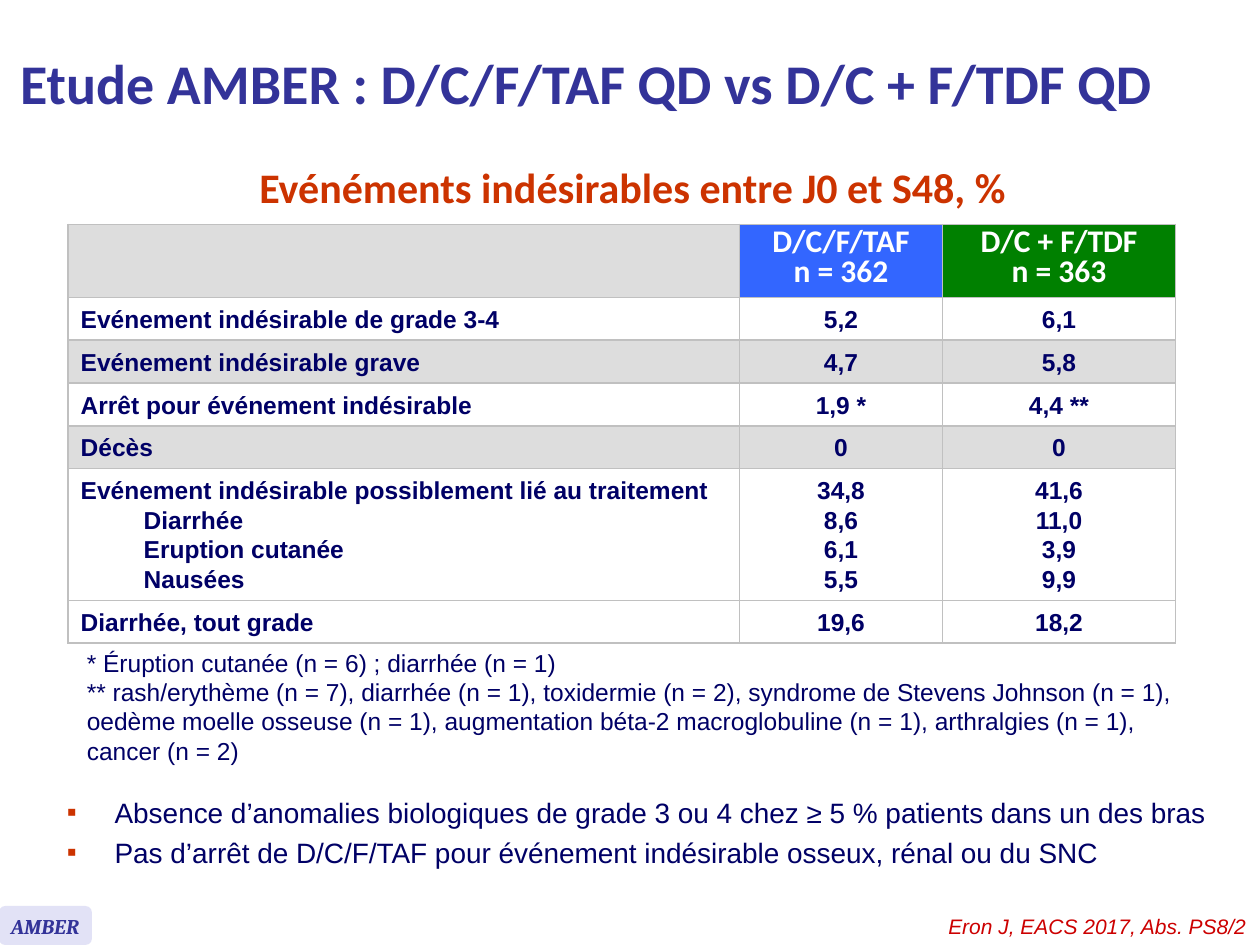
from dataclasses import dataclass

import lxml.etree
import pptx
import pptx.dml.color
import pptx.enum.shapes
import pptx.enum.text
import pptx.oxml.ns
import pptx.util

Inches = pptx.util.Inches
Pt = pptx.util.Pt
PP_ALIGN = pptx.enum.text.PP_ALIGN
MSO_ANCHOR = pptx.enum.text.MSO_ANCHOR
MSO_AUTO_SIZE = pptx.enum.text.MSO_AUTO_SIZE
qn = pptx.oxml.ns.qn

NAVY, INDIGO, RUST, WHITE = "000066", "333399", "CC3300", "FFFFFF"
GREY, BORDER = "DDDDDD", "C0C0C0"


@dataclass
class Style:
    size: float
    face: str
    color: str
    bold: bool = False
    italic: bool = False
    align: PP_ALIGN = PP_ALIGN.LEFT
    line_pt: float = 0


@dataclass
class Row:
    height: float
    fills: tuple[str, str, str]
    label: list[str]
    values: tuple[list[str], list[str]]


def rgb(color: str) -> pptx.dml.color.RGBColor:
    return pptx.dml.color.RGBColor.from_string(color)


def place(shape, left: float, top: float, width: float, height: float) -> None:
    shape.left, shape.top = Inches(left), Inches(top)
    shape.width, shape.height = Inches(width), Inches(height)


def set_indent(paragraph, left: float, first: float = 0) -> None:
    properties = paragraph._p.get_or_add_pPr()
    properties.set("marL", str(Inches(left)))
    properties.set("indent", str(Inches(first)))


def set_bullet(paragraph, char: str = "", color: str = "") -> None:
    properties = paragraph._p.get_or_add_pPr()
    if not char:
        lxml.etree.SubElement(properties, qn("a:buNone"))
        return
    bullet_color = lxml.etree.SubElement(properties, qn("a:buClr"))
    lxml.etree.SubElement(bullet_color, qn("a:srgbClr")).set("val", color)
    lxml.etree.SubElement(properties, qn("a:buFont")).set("typeface", "Arial")
    lxml.etree.SubElement(properties, qn("a:buChar")).set("char", char)


def write(frame, lines: list[str], style: Style) -> list:
    """Fill a text frame with one paragraph per line."""
    for index, line in enumerate(lines):
        paragraph = frame.paragraphs[0] if index == 0 else frame.add_paragraph()
        paragraph.text = line
    for paragraph in frame.paragraphs:
        paragraph.alignment = style.align
        if style.line_pt:
            paragraph.line_spacing = Pt(style.line_pt)
    return list(frame.paragraphs)


def format_font(paragraphs: list, style: Style) -> None:
    for paragraph in paragraphs:
        font = paragraph.font
        font.size, font.name = Pt(style.size), style.face
        font.bold, font.italic = style.bold, style.italic
        font.color.rgb = rgb(style.color)


def add_text(slide, box: tuple, lines: list[str], style: Style, wrap: bool = True) -> None:
    note = slide.shapes.add_textbox(*map(Inches, box))
    note.text_frame.word_wrap = wrap
    note.text_frame.auto_size = MSO_AUTO_SIZE.SHAPE_TO_FIT_TEXT
    format_font(write(note.text_frame, lines, style), style)


def fill_cell(cell, fill: str, lines: list[str], style: Style) -> None:
    properties = cell._tc.get_or_add_tcPr()
    for side in ("a:lnL", "a:lnR", "a:lnT", "a:lnB"):
        line = lxml.etree.SubElement(properties, qn(side), w=str(Pt(1)))
        solid = lxml.etree.SubElement(line, qn("a:solidFill"))
        lxml.etree.SubElement(solid, qn("a:srgbClr")).set("val", BORDER)
    cell.fill.solid()
    cell.fill.fore_color.rgb = rgb(fill)
    cell.vertical_anchor = MSO_ANCHOR.MIDDLE
    paragraphs = write(cell.text_frame, lines, style)
    for paragraph in paragraphs[1:] if style.align == PP_ALIGN.LEFT else []:
        paragraph.level = 1
        set_indent(paragraph, 0.5)
    format_font(paragraphs, style)


def add_events_table(slide, rows: list[Row], widths: list[float]) -> None:
    height = sum(row.height for row in rows)
    table = slide.shapes.add_table(
        len(rows), len(widths), Inches(0.54), Inches(1.78),
        Inches(sum(widths)), Inches(height)).table
    for column, width in zip(table.columns, widths):
        column.width = Inches(width)
    label = Style(14, "Arial", NAVY, bold=True, line_pt=17)
    value = Style(14, "Arial", NAVY, bold=True, align=PP_ALIGN.CENTER, line_pt=17)
    header = Style(18, "Calibri", WHITE, bold=True, align=PP_ALIGN.CENTER, line_pt=17)
    for index, row in enumerate(rows):
        table.rows[index].height = Inches(row.height)
        for column, lines in enumerate([row.label, *row.values]):
            style = header if index == 0 else value if column else label
            fill_cell(table.cell(index, column), row.fills[column], lines, style)


def event(label: str, taf: str, tdf: str, fill: str = WHITE) -> Row:
    return Row(0.34, (fill,) * 3, [label], ([taf], [tdf]))


ROWS = [
    Row(0.58, (GREY, "3366FF", "008000"), [],
        (["D/C/F/TAF", "n = 362"], ["D/C + F/TDF", "n = 363"])),
    event("Evénement indésirable de grade 3-4", "5,2", "6,1"),
    event("Evénement indésirable grave", "4,7", "5,8", GREY),
    event("Arrêt pour événement indésirable", "1,9 *", "4,4 **"),
    event("Décès", "0", "0", GREY),
    Row(1.04, (WHITE,) * 3,
        ["Evénement indésirable possiblement lié au traitement",
         "Diarrhée", "Eruption cutanée", "Nausées"],
        (["34,8", "8,6\v6,1\v5,5"], ["41,6", "11,0\v3,9\v9,9"])),
    event("Diarrhée, tout grade", "19,6", "18,2"),
]
FOOTNOTES = [
    "* Éruption cutanée (n = 6) ; diarrhée (n = 1)",
    "** rash/erythème (n = 7), diarrhée (n = 1), toxidermie (n = 2), syndrome de Stevens Johnson (n = 1),",
    "oedème moelle osseuse (n = 1), augmentation béta-2 macroglobuline (n = 1), arthralgies (n = 1),",
    "cancer (n = 2)",
]
FINDINGS = [
    "Absence d’anomalies biologiques de grade 3 ou 4 chez ≥ 5 % patients dans un des bras",
    "Pas d’arrêt de D/C/F/TAF pour événement indésirable osseux, rénal ou du SNC",
]


def main() -> None:
    deck = pptx.Presentation()
    deck.slide_width, deck.slide_height = Inches(10), Inches(7.5)
    slide = deck.slides.add_slide(deck.slide_layouts[3])
    title, subtitle, findings = slide.placeholders
    for holder in (title, subtitle, findings):
        holder.text_frame.auto_size = MSO_AUTO_SIZE.NONE

    # Title and subtitle
    place(title, 0.06, 0.05, 9.55, 1.21)
    title.text_frame.vertical_anchor = MSO_ANCHOR.MIDDLE
    title_style = Style(32, "Calibri", INDIGO, bold=True)
    format_font(write(title.text_frame, ["Etude AMBER : D/C/F/TAF QD vs D/C + F/TDF QD"],
                      title_style), title_style)
    place(subtitle, 0.04, 1.27, 9.96, 0.51)
    subtitle_style = Style(24, "Calibri", RUST, bold=True, align=PP_ALIGN.CENTER, line_pt=26)
    heading = write(subtitle.text_frame, ["Evénéments indésirables entre J0 et S48, %"],
                    subtitle_style)
    set_indent(heading[0], 0)
    heading[0].space_before = Pt(0)
    set_bullet(heading[0])
    format_font(heading, subtitle_style)

    # Adverse events and their footnotes
    add_events_table(slide, ROWS, [5.33, 1.61, 1.85])
    add_text(slide, (0.59, 5.09, 8.88, 1.04), FOOTNOTES, Style(14, "Arial", NAVY), wrap=False)

    # Findings list
    place(findings, 0.43, 6.26, 9.45, 0.8)
    findings_style = Style(16, "Arial", NAVY)
    items = write(findings.text_frame, FINDINGS, findings_style)
    for index, item in enumerate(items):
        set_indent(item, 0.38, -0.38)
        item.space_before = Pt(4 if index else 0)
        set_bullet(item, "▪", RUST)
    format_font(items, findings_style)

    # Study badge and reference
    badge = slide.shapes.add_shape(pptx.enum.shapes.MSO_SHAPE.ROUNDED_RECTANGLE,
                                   Inches(-0.01), Inches(7.19), Inches(0.74), Inches(0.31))
    badge.shadow.inherit = False
    badge.fill.solid()
    badge.fill.fore_color.rgb = rgb("E2E2F6")
    badge.line.fill.background()
    add_text(slide, (-0.01, 7.2, 0.75, 0.3), ["AMBER"],
             Style(12, "Cambria", INDIGO, bold=True, italic=True))
    add_text(slide, (5.83, 7.2, 4.16, 0.3), ["Eron J, EACS 2017, Abs. PS8/2"],
             Style(12, "Arial", "CC0000", italic=True, align=PP_ALIGN.RIGHT))
    deck.save("out.pptx")


if __name__ == "__main__":
    main()
